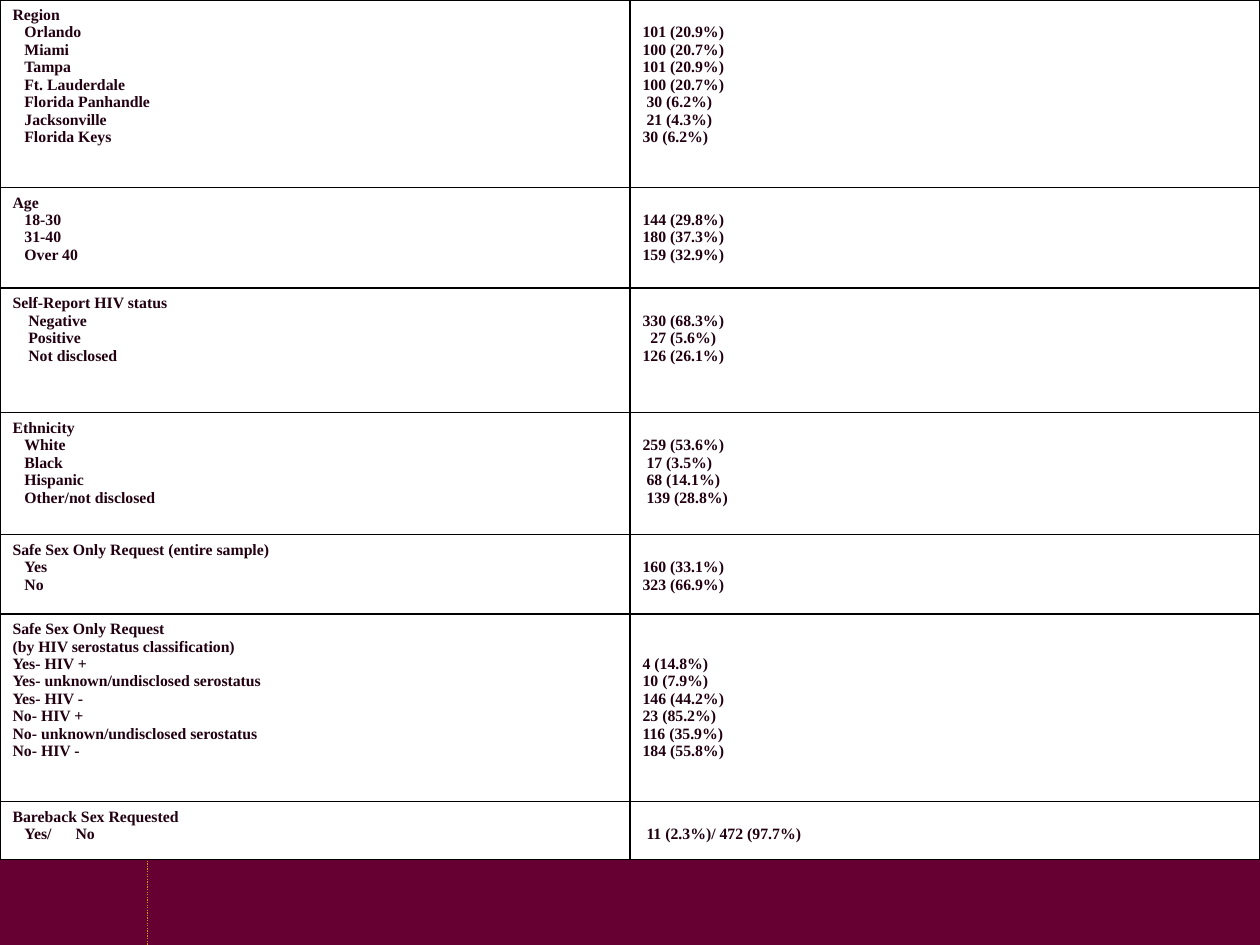
from lxml.etree import SubElement
from pptx import Presentation
from pptx.dml.color import RGBColor
from pptx.enum.dml import MSO_LINE_DASH_STYLE as Dash
from pptx.enum.shapes import MSO_CONNECTOR as Connector
from pptx.oxml.ns import qn
from pptx.util import Cm, Pt

# Per group: headings, label indent in spaces, then (label, value, value indent in spaces)
GROUPS = [
    (["Region"], 3, [
        ("Orlando", "101 (20.9%)", 0),
        ("Miami", "100 (20.7%)", 0),
        ("Tampa", "101 (20.9%)", 0),
        ("Ft. Lauderdale", "100 (20.7%)", 0),
        ("Florida Panhandle", "30 (6.2%)", 1),
        ("Jacksonville", "21 (4.3%)", 1),
        ("Florida Keys", "30 (6.2%)", 0),
    ]),
    (["Age"], 3, [
        ("18-30", "144 (29.8%)", 0),
        ("31-40", "180 (37.3%)", 0),
        ("Over 40", "159 (32.9%)", 0),
    ]),
    (["Self-Report HIV status"], 4, [
        ("Negative", "330 (68.3%)", 0),
        ("Positive", "27 (5.6%)", 2),
        ("Not disclosed", "126 (26.1%)", 0),
    ]),
    (["Ethnicity"], 3, [
        ("White", "259 (53.6%)", 0),
        ("Black", "17 (3.5%)", 1),
        ("Hispanic", "68 (14.1%)", 1),
        ("Other/not disclosed", "139 (28.8%)", 1),
    ]),
    (["Safe Sex Only Request (entire sample)"], 3, [
        ("Yes", "160 (33.1%)", 0),
        ("No", "323 (66.9%)", 0),
    ]),
    (["Safe Sex Only Request", "(by HIV serostatus classification)"], 0, [
        ("Yes- HIV +", "4 (14.8%)", 0),
        ("Yes- unknown/undisclosed serostatus", "10 (7.9%)", 0),
        ("Yes- HIV -", "146 (44.2%)", 0),
        ("No- HIV +", "23 (85.2%)", 0),
        ("No- unknown/undisclosed serostatus", "116 (35.9%)", 0),
        ("No- HIV -", "184 (55.8%)", 0),
    ]),
    (["Bareback Sex Requested"], 3, [
        ("Yes/\tNo", "11 (2.3%)/ 472 (97.7%)", 1),
    ]),
]
ROW_HEIGHTS = [3.78, 2.03, 2.51, 2.46, 1.6, 3.78, 1.17]

MAROON = RGBColor(0x66, 0x00, 0x33)
GOLD = RGBColor(0xCC, 0x99, 0x00)
INK = RGBColor(0x22, 0x00, 0x11)
WHITE = RGBColor(0xFF, 0xFF, 0xFF)
BLACK = RGBColor(0x00, 0x00, 0x00)

FONT = {"name": "Times New Roman", "size": Pt(9), "bold": True}
SPACE_WIDTH = Pt(2.25)
LINE_HEIGHT = Pt(10)
CELL_TOP = Cm(0.13)
TAB_STOP = Cm(1.1)
PAGE_WIDTH, PAGE_HEIGHT = Cm(25.4), Cm(19.05)


def draw_borders(cell):
    properties = cell._tc.get_or_add_tcPr()
    for side in ("lnL", "lnR", "lnT", "lnB"):
        line = SubElement(properties, qn(f"a:{side}"), w=str(Pt(1)))
        fill = SubElement(line, qn("a:solidFill"))
        SubElement(fill, qn("a:srgbClr"), val=str(BLACK))


def fill_cell(cell, lines, skipped=0):
    """Write (text, indent in spaces) lines, starting below the skipped lines."""
    draw_borders(cell)
    cell.fill.solid()
    cell.fill.fore_color.rgb = WHITE
    cell.margin_top = CELL_TOP + skipped * LINE_HEIGHT
    frame = cell.text_frame
    for number, (text, spaces) in enumerate(lines):
        para = frame.add_paragraph() if number else frame.paragraphs[0]
        properties = para._p.get_or_add_pPr()
        properties.set("marL", "0")
        properties.set("indent", str(spaces * SPACE_WIDTH))
        if "\t" in text:
            tabs = SubElement(properties, qn("a:tabLst"))
            SubElement(tabs, qn("a:tab"), pos=str(TAB_STOP), algn="l")
        span = para.add_run()
        span.text = text
        for name, value in FONT.items():
            setattr(span.font, name, value)
        span.font.color.rgb = INK


def add_dotted_line(page):
    line = page.shapes.add_connector(
        Connector.STRAIGHT, Cm(2.97), Cm(17.35), Cm(2.97), PAGE_HEIGHT)
    line.line.color.rgb = GOLD
    line.line.width = Pt(0.75)
    line.line.dash_style = Dash.ROUND_DOT
    SubElement(line._element.spPr, qn("a:effectLst"))


def add_sample_table(page):
    table = page.shapes.add_table(
        len(GROUPS), 2, 0, 0, PAGE_WIDTH, Cm(sum(ROW_HEIGHTS))).table
    table.first_row = table.horz_banding = False
    for row, height, (headings, indent, items) in zip(table.rows, ROW_HEIGHTS, GROUPS):
        row.height = Cm(height)
        labels = [(heading, 0) for heading in headings]
        labels += [(label, indent) for label, _, _ in items]
        values = [(value, spaces) for _, value, spaces in items]
        fill_cell(row.cells[0], labels)
        fill_cell(row.cells[1], values, skipped=len(headings))


def main():
    deck = Presentation()
    deck.slide_width, deck.slide_height = PAGE_WIDTH, PAGE_HEIGHT
    page = deck.slides.add_slide(deck.slide_layouts[6])
    page.background.fill.solid()
    page.background.fill.fore_color.rgb = MAROON
    add_dotted_line(page)
    add_sample_table(page)
    deck.save("out.pptx")


if __name__ == "__main__":
    main()
